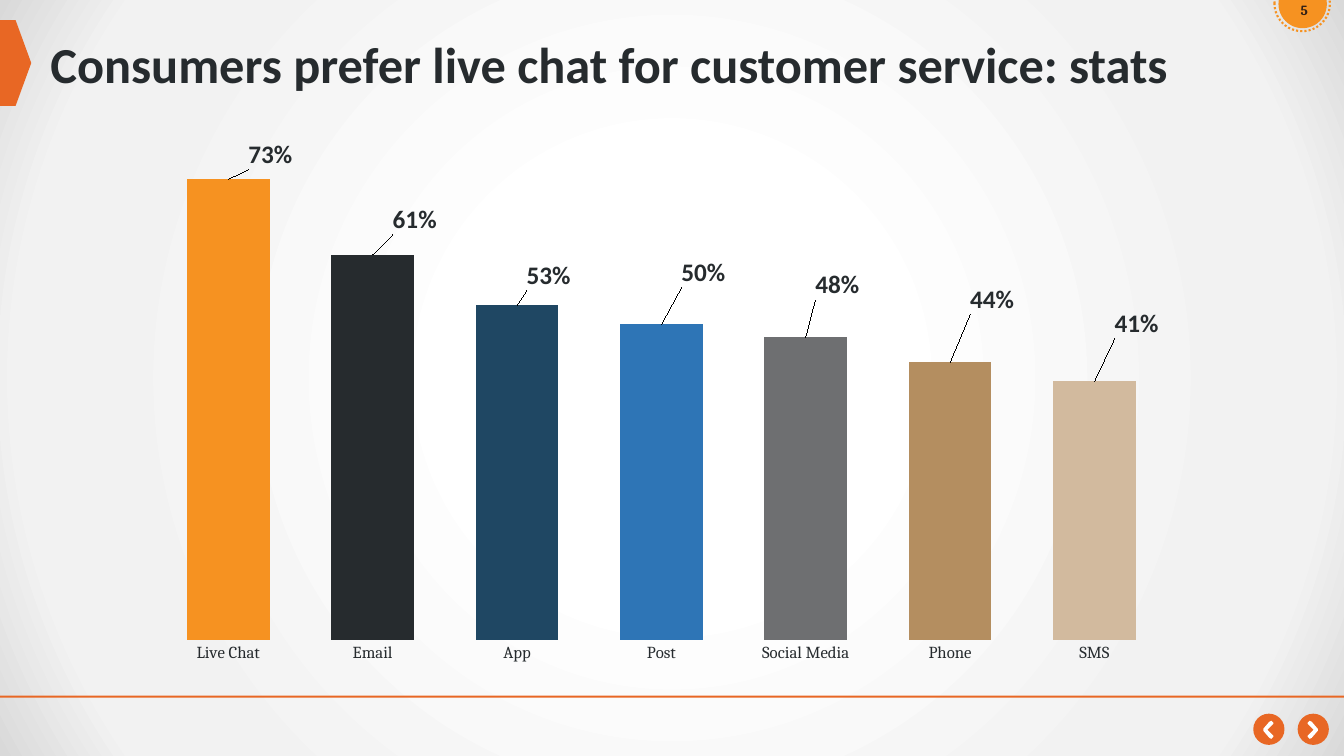
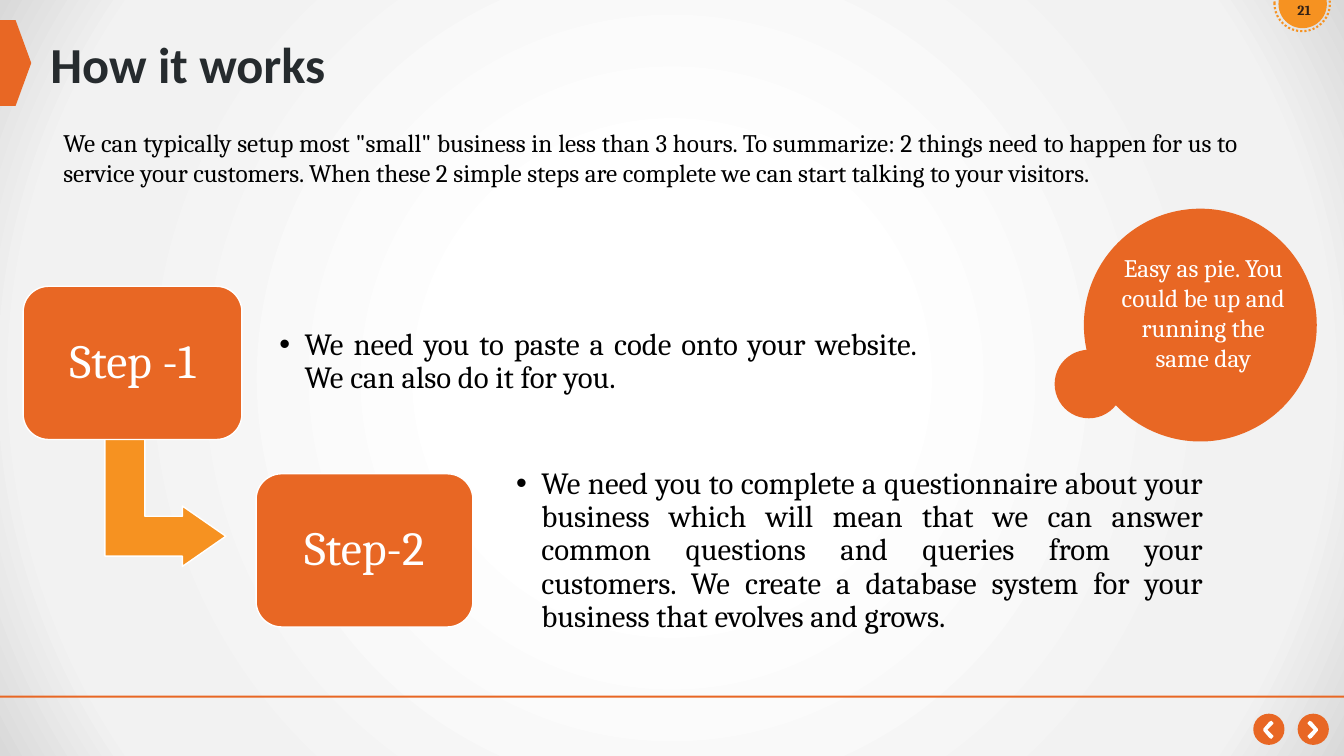
import lxml.etree
import pptx
import pptx.chart.data
import pptx.dml.color
import pptx.enum.chart
import pptx.enum.dml
import pptx.enum.shapes
import pptx.enum.text
import pptx.oxml
import pptx.oxml.ns
import pptx.util

Inches = pptx.util.Inches
SHAPE = pptx.enum.shapes.MSO_SHAPE
ALIGN = pptx.enum.text.PP_ALIGN
ANCHOR = pptx.enum.text.MSO_ANCHOR

ORANGE, AMBER, CHARCOAL, WHITE, BLACK, BROWN = (
    "E86724", "F69221", "262B2E", "FFFFFF", "000000", "312016")
HEADING_FONT, BODY_FONT = "Calibri", "Cambria"
BACKGROUND_STOPS = [(0, "FFFFFF"), (27, "FFFFFF"), (74, "F2F2F2"), (85, "F2F2F2"), (100, "D9D9D9")]
CHEVRON = [(0.02, 0), (0.04, 0.01), (0.1, 0.08), (0.1, 0.1), (0.04, 0.17),
           (0.02, 0.18), (0, 0.16), (0, 0.15), (0.06, 0.09), (0, 0.03), (0, 0.02)]

CHANNELS = [
    ("Live Chat", 0.73, "F69221", 0.04, -0.08),
    ("Email", 0.61, "262B2E", 0.04, -0.1),
    ("App", 0.53, "1F4763", 0.03, -0.09),
    ("Post", 0.5, "2E75B6", 0.04, -0.13),
    ("Social Media", 0.48, "6E6F71", 0.03, -0.13),
    ("Phone", 0.44, "B48E60", 0.04, -0.15),
    ("SMS", 0.41, "D2BA9E", 0.04, -0.14),
]
INTRO = ('We can typically setup most "small" business in less than 3 hours. To summarize: 2 things '
         "need to happen for us to service your customers. When these 2 simple steps are complete "
         "we can start talking to your visitors.")
STEPS = [
    ("Step -1", (0.23, 2.84, 2.17, 1.52), (2.68, 2.59, 6.5, 2.01),
     "We need you to paste a code onto your website. We can also do it for you."),
    ("Step-2", (2.54, 4.7, 2.15, 1.52), (5.03, 4.46, 6.99, 2.01),
     "We need you to complete a questionnaire about your business which will mean that we can "
     "answer common questions and queries from your customers. We create a database system for "
     "your business that evolves and grows."),
]


def rgb(color):
    """Turn a hex string into a colour."""
    return pptx.dml.color.RGBColor.from_string(color)


def assign(target, **values):
    """Set each named attribute on the target."""
    for name, value in values.items():
        setattr(target, name, value)


def place(shape, box):
    """Move and size a shape to a box in inches."""
    assign(shape, **dict(zip(("left", "top", "width", "height"), map(Inches, box))))


def style_font(font, size, color, name=BODY_FONT, bold=False):
    """Format a font."""
    assign(font, size=pptx.util.Pt(size), name=name, bold=bold)
    font.color.rgb = rgb(color)


def write(shape, text, size, color, name=BODY_FONT, bold=False, frame=None, **paragraph_format):
    """Write one formatted paragraph into a shape."""
    assign(shape.text_frame, word_wrap=True, **(frame or {}))
    paragraph = shape.text_frame.paragraphs[0]
    assign(paragraph, text=text, **paragraph_format)
    style_font(paragraph.runs[0].font, size, color, name, bold)


def paint(shape, fill=None, line=None, width=1):
    """Give a shape a flat fill and an optional outline."""
    shape.shadow.inherit = False
    for target, color in ((shape.fill, fill), (shape.line.fill, line)):
        if color:
            target.solid()
            target.fore_color.rgb = rgb(color)
        else:
            target.background()
    if line:
        shape.line.width = pptx.util.Pt(width)
    return shape


def add_shape(slide, kind, box, fill=None, line=None, width=1):
    """Add a painted preset shape."""
    return paint(slide.shapes.add_shape(kind, *map(Inches, box)), fill, line, width)


def add_text(slide, box, *content, **formatting):
    """Add a text box with one paragraph."""
    write(slide.shapes.add_textbox(*map(Inches, box)), *content, **formatting)


def add_arrow_button(slide, left, top, forward):
    """Draw a round navigation button with a chevron."""
    disc = add_shape(slide, SHAPE.OVAL, (left, top, 0.31, 0.31), ORANGE)
    points = [(left + 0.1 + (x if forward else 0.1 - x), top + 0.07 + y) for x, y in CHEVRON]
    points = [(Inches(x), Inches(y)) for x, y in points]
    builder = slide.shapes.build_freeform(*points[0])
    builder.add_line_segments(points[1:])
    return [disc, paint(builder.convert_to_shape(), WHITE)]


def style_background(master):
    """Fill the master background with a radial gradient."""
    master.background.fill.solid()
    stops = "".join(f'<a:gs pos="{position * 1000}"><a:srgbClr val="{color}"/></a:gs>'
                    for position, color in BACKGROUND_STOPS)
    gradient = pptx.oxml.parse_xml(
        f'<a:gradFill {pptx.oxml.ns.nsdecls("a")} rotWithShape="1"><a:gsLst>{stops}</a:gsLst>'
        '<a:path path="circle"><a:fillToRect l="50000" t="50000" r="50000" b="50000"/></a:path>'
        "</a:gradFill>")
    solid = master.element.xpath("./p:cSld/p:bg/p:bgPr/a:solidFill")[0]
    solid.getparent().replace(solid, gradient)


def style_master(master, slide):
    """Build the shared decoration on a slide and move it to the master."""
    style_background(master)
    place(master.placeholders[0], (0.4, 0.31, 12.54, 0.72))
    ring = add_shape(slide, SHAPE.OVAL, (12.64, -0.24, 0.55, 0.55), line=AMBER, width=1.5)
    ring.line.dash_style = pptx.enum.dml.MSO_LINE.ROUND_DOT
    decoration = [
        add_shape(slide, SHAPE.PENTAGON, (0, 0.2, 0.31, 0.85), ORANGE),
        *add_arrow_button(slide, 12.43, 7.08, False),
        *add_arrow_button(slide, 12.87, 7.08, True),
        add_shape(slide, SHAPE.RECTANGLE, (0, 6.9, 13.33, 0.02), ORANGE),
        add_shape(slide, SHAPE.OVAL, (12.68, -0.2, 0.48, 0.48), AMBER),
        ring,
    ]
    for shape in decoration:
        master.shapes.element.append(shape.element)


def add_heading(slide, title, number):
    """Write the slide title and the number in the badge."""
    write(slide.shapes.title, title, 36, CHARCOAL, HEADING_FONT, True,
          frame={"vertical_anchor": ANCHOR.MIDDLE,
                 "auto_size": pptx.enum.text.MSO_AUTO_SIZE.NONE},
          alignment=ALIGN.LEFT, line_spacing=0.9)
    add_text(slide, (12.67, -0.03, 0.53, 0.51), number, 10, BROWN, bold=True,
             alignment=ALIGN.CENTER)


def manual_layout(**values):
    """Make a chart layout element from fractions."""
    layout = pptx.oxml.parse_xml(f'<c:layout {pptx.oxml.ns.nsdecls("c")}><c:manualLayout/></c:layout>')
    for name, value in values.items():
        lxml.etree.SubElement(layout[0], pptx.oxml.ns.qn(f"c:{name}"), val=str(value))
    return layout


def add_channel_chart(slide, box):
    """Draw the column chart of preferred channels."""
    data = pptx.chart.data.CategoryChartData(number_format="0%")
    data.categories = [channel[0] for channel in CHANNELS]
    data.add_series("Series 1", [channel[1] for channel in CHANNELS])
    chart = slide.shapes.add_chart(pptx.enum.chart.XL_CHART_TYPE.COLUMN_CLUSTERED,
                                   *map(Inches, box), data).chart
    assign(chart, has_legend=False, has_title=False)
    style_font(chart.font, 10, CHARCOAL)
    assign(chart.value_axis, visible=False, has_major_gridlines=False,
           minimum_scale=0, maximum_scale=0.8)
    chart.category_axis.major_tick_mark = pptx.enum.chart.XL_TICK_MARK.NONE
    chart.category_axis.format.line.fill.background()
    style_font(chart.category_axis.tick_labels.font, 12, CHARCOAL)
    plot = chart.plots[0]
    assign(plot, gap_width=75, overlap=40, vary_by_categories=False, has_data_labels=True)
    assign(plot.data_labels, show_value=True, number_format="0%", number_format_is_linked=False)
    for index, (_, _, color, right, down) in enumerate(CHANNELS):
        point = plot.series[0].points[index]
        point.format.fill.solid()
        point.format.fill.fore_color.rgb = rgb(color)
        style_font(point.data_label.font, 18, CHARCOAL, HEADING_FONT, True)
        point.data_label.position = pptx.enum.chart.XL_LABEL_POSITION.INSIDE_END
        label = chart.element.xpath(f".//c:dLbl[c:idx/@val='{index}']")[0]
        label.insert(1, manual_layout(x=right, y=down))
    area = chart.element.xpath(".//c:plotArea")[0]
    for layout in area.xpath("./c:layout"):
        area.remove(layout)
    area.insert(0, manual_layout(layoutTarget="inner", xMode="edge", yMode="edge",
                                 x=0.02, y=0.02, w=0.96, h=0.92))


def add_step(slide, placeholder, label, box, text_box, text):
    """Draw a step tile and its bulleted description."""
    tile = add_shape(slide, SHAPE.ROUNDED_RECTANGLE, box, ORANGE, WHITE)
    write(tile, label, 34, WHITE, frame={"vertical_anchor": ANCHOR.MIDDLE},
          alignment=ALIGN.CENTER, line_spacing=0.9)
    place(placeholder, text_box)
    margins = {f"margin_{side}": Inches(0.09) for side in ("left", "top", "right", "bottom")}
    write(placeholder, text, 22, BLACK,
          frame={"vertical_anchor": ANCHOR.MIDDLE,
                 "auto_size": pptx.enum.text.MSO_AUTO_SIZE.NONE, **margins},
          alignment=ALIGN.JUSTIFY, line_spacing=0.9, space_before=pptx.util.Pt(0))
    properties = placeholder.text_frame.paragraphs[0]._p.get_or_add_pPr()
    properties.set("marL", str(Inches(0.25)))
    properties.set("indent", str(-Inches(0.25)))


def add_bubble(slide, left, top, text):
    """Draw a round thought bubble with its text."""
    for x, y, size in ((0.29, 0, 2.31), (0, 1.4, 0.68)):
        add_shape(slide, SHAPE.OVAL, (left + x, top + y, size, size), ORANGE)
    add_text(slide, (left + 0.56, top + 0.38, 1.83, 1.31), text, 18, WHITE,
             alignment=ALIGN.CENTER)


def build_chart_slide(slide):
    """Fill the statistics slide."""
    add_heading(slide, "Consumers prefer live chat for customer service: stats", "5")
    add_channel_chart(slide, (1.34, 1.23, 10.44, 5.45))


def build_steps_slide(slide):
    """Fill the slide that explains the two steps."""
    add_heading(slide, "How it works", "21")
    arrow = add_shape(slide, SHAPE.BENT_UP_ARROW, (0.92, 4.3, 1.44, 1.2), AMBER, WHITE)
    arrow.rotation = 90
    for index, value in enumerate((0.33, 0.25, 0.36)):
        arrow.adjustments[index] = value
    for index, step in enumerate(STEPS, 1):
        add_step(slide, slide.placeholders[index], *step)
    add_text(slide, (0.53, 1.21, 11.85, 0.71), INTRO, 18, BLACK, alignment=ALIGN.JUSTIFY)
    add_bubble(slide, 10.46, 2.07, "Easy as pie. You could be up and running the same day")


def main():
    """Build and save the presentation."""
    presentation = pptx.Presentation()
    assign(presentation, slide_width=Inches(13.33), slide_height=Inches(7.5))
    layouts = presentation.slide_layouts
    chart_slide = presentation.slides.add_slide(layouts.get_by_name("Title Only"))
    steps_slide = presentation.slides.add_slide(layouts.get_by_name("Two Content"))
    style_master(presentation.slide_master, chart_slide)
    build_chart_slide(chart_slide)
    build_steps_slide(steps_slide)
    presentation.save("out.pptx")


if __name__ == "__main__":
    main()
